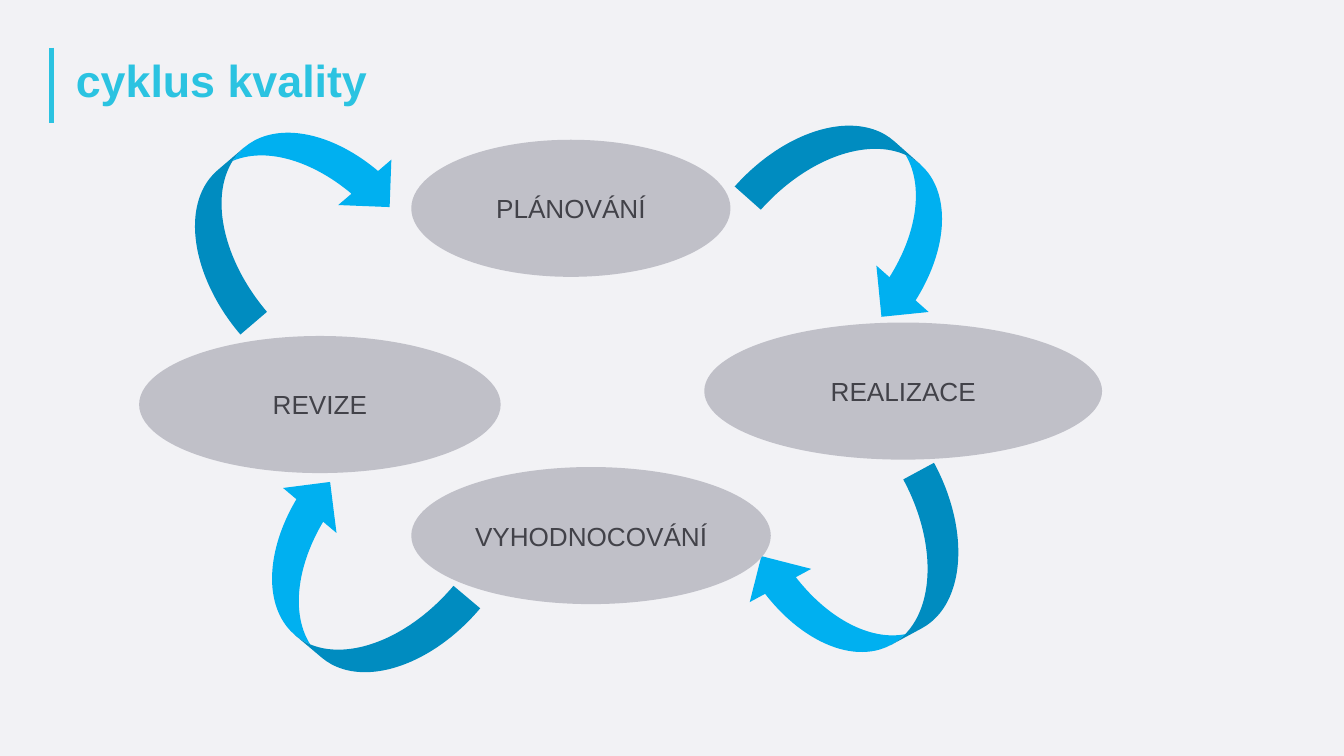
from dataclasses import dataclass

from lxml import etree
from pptx import Presentation
from pptx import util as u
from pptx.dml.color import RGBColor
from pptx.enum import shapes, text
from pptx.oxml.ns import qn

PX = 9144  # 100 px to the inch


@dataclass(frozen=True)
class Theme:
    background: str = "F2F2F5"
    accent: str = "2BC3E1"
    arrow: str = "00B0F0"
    stage: str = "C0C0C8"
    stage_text: str = "424249"
    font: str = "Arial"
    title_size: int = 48
    stage_size: int = 28


THEME = Theme()
ARROW_SIZE = (208, 344)

# left, top, rotation
ARROWS = [
    (1187, 142, 311.6),
    (412, 702, 130.1),
    (317, 135, 229.5),
    (1184, 690, 61.6),
]

# label, left, top, width
STAGE_HEIGHT = 204
STAGES = [
    ("PLÁNOVÁNÍ", 612, 208, 475),
    ("REALIZACE", 1048, 480, 592),
    ("VYHODNOCOVÁNÍ", 612, 695, 535),
    ("REVIZE", 207, 500, 538),
]


def px(*lengths):
    return [u.Emu(length * PX) for length in lengths]


def rgb(colour):
    return RGBColor.from_string(colour)


def style_paragraph(paragraph, size, colour, bold=False):
    font = paragraph.font
    font.name = THEME.font
    font.size = u.Pt(size)
    font.bold = bold
    font.color.rgb = rgb(colour)


def add_filled(slide, preset, box, colour):
    filled = slide.shapes.add_shape(preset, *px(*box))
    filled.shadow.inherit = False
    filled.fill.solid()
    filled.fill.fore_color.rgb = rgb(colour)
    filled.line.fill.background()
    return filled


def add_title(slide, wording):
    # Vertical rule beside the title
    rule = slide.shapes.add_connector(
        shapes.MSO_CONNECTOR.STRAIGHT, *px(77, 71, 77, 183))
    rule.line.color.rgb = rgb(THEME.accent)
    rule.line.width = u.Pt(5)
    etree.SubElement(rule._element.spPr, qn("a:effectLst"))

    title = slide.shapes.add_textbox(*px(103, 88, 1897, 71))
    frame = title.text_frame
    frame.word_wrap = True
    frame.vertical_anchor = text.MSO_ANCHOR.MIDDLE
    heading = frame.paragraphs[0]
    heading.text = wording
    heading.line_spacing = 0.9
    style_paragraph(heading, THEME.title_size, THEME.accent, bold=True)


def add_cycle_arrow(slide, left, top, rotation):
    arrow = add_filled(slide, shapes.MSO_SHAPE.CURVED_LEFT_ARROW,
                       (left, top, *ARROW_SIZE), THEME.arrow)
    arrow.rotation = rotation


def add_stage(slide, label, left, top, width):
    stage = add_filled(slide, shapes.MSO_SHAPE.OVAL,
                       (left, top, width, STAGE_HEIGHT), THEME.stage)
    frame = stage.text_frame
    frame.vertical_anchor = text.MSO_ANCHOR.MIDDLE
    caption = frame.paragraphs[0]
    caption.text = label
    caption.alignment = text.PP_ALIGN.CENTER
    style_paragraph(caption, THEME.stage_size, THEME.stage_text)


def main():
    deck = Presentation()
    deck.slide_width, deck.slide_height = px(2000, 1125)
    slide = deck.slides.add_slide(deck.slide_layouts[6])
    slide.background.fill.solid()
    slide.background.fill.fore_color.rgb = rgb(THEME.background)

    add_title(slide, "cyklus kvality")

    # Arrows lie behind the stages they join
    for arrow in ARROWS:
        add_cycle_arrow(slide, *arrow)
    for stage in STAGES:
        add_stage(slide, *stage)

    deck.save("out.pptx")


if __name__ == "__main__":
    main()
